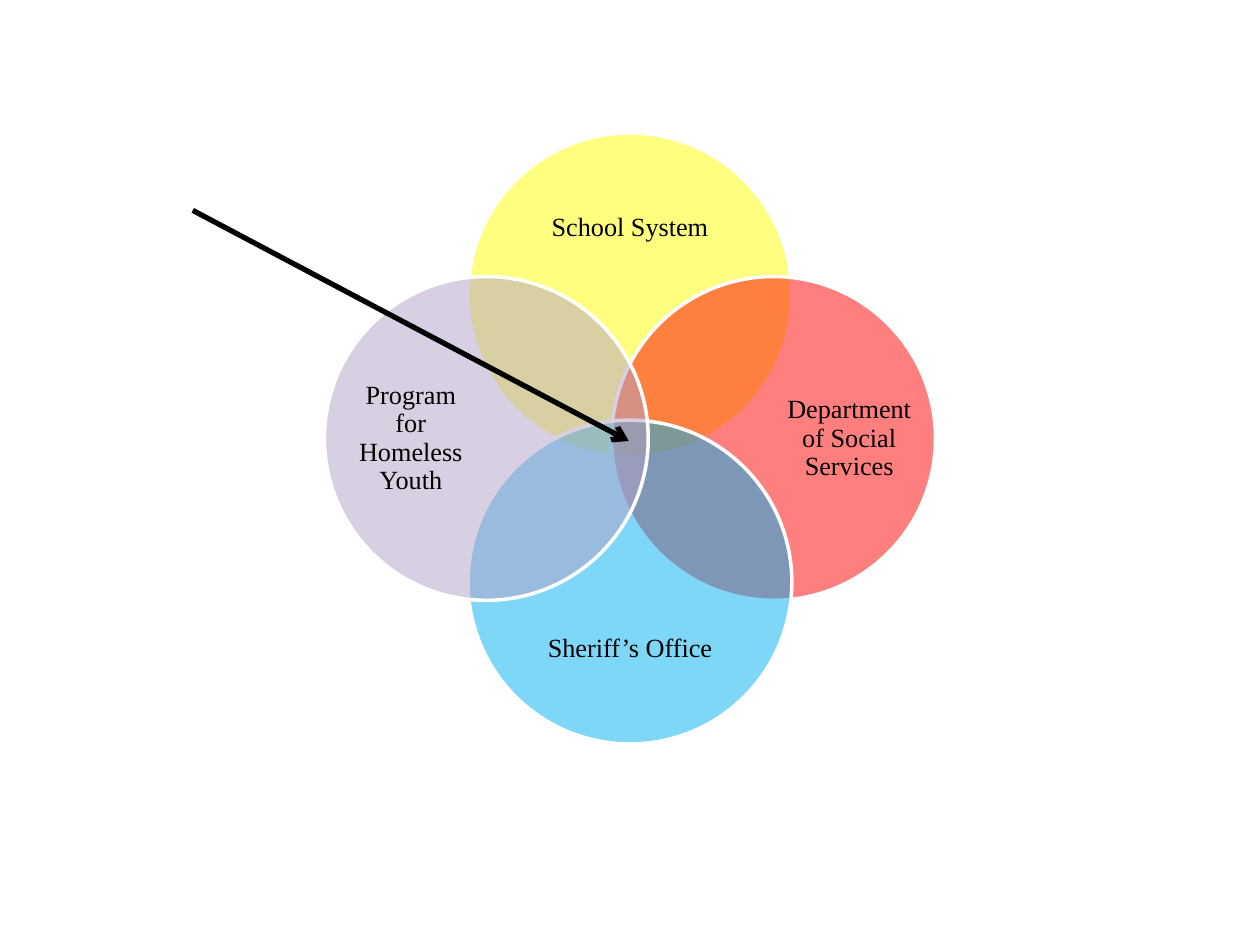
from dataclasses import dataclass

from lxml import etree
from pptx import Presentation
from pptx.dml.color import RGBColor
from pptx.enum import shapes, text
from pptx.oxml import ns
from pptx.util import Inches, Pt

CENTER_X, CENTER_Y = 5.0, 3.48
DIAMETER = 2.57
CIRCLE_OFFSET = 1.14
OPACITY = 50


@dataclass
class Agency:
    name: str
    color: str
    direction: tuple[int, int]  # unit step from the diagram centre


AGENCIES = [
    Agency("School System", "FFFF00", (0, -1)),
    Agency("Department of Social Services", "FF0000", (1, 0)),
    Agency("Sheriff’s Office", "00B0F0", (0, 1)),
    Agency("Program for Homeless Youth", "B3A2C7", (-1, 0)),
]


def rgb(color: str) -> RGBColor:
    return RGBColor.from_string(color)


def placed(agency: Agency, offset: float, width: float, height: float) -> list[int]:
    """Left, top, width and height of an item shifted from the diagram centre."""
    step_x, step_y = agency.direction
    left = CENTER_X + step_x * offset - width / 2
    top = CENTER_Y + step_y * offset - height / 2
    return [Inches(value) for value in (left, top, width, height)]


def add_circle(group, agency: Agency) -> None:
    circle = group.shapes.add_shape(
        shapes.MSO_SHAPE.OVAL, *placed(agency, CIRCLE_OFFSET, DIAMETER, DIAMETER))
    circle.shadow.inherit = False
    circle.fill.solid()
    circle.fill.fore_color.rgb = rgb(agency.color)
    fill_color = circle.fill._xPr.find(ns.qn("a:solidFill"))[0]
    etree.SubElement(fill_color, ns.qn("a:alpha"), val=str(OPACITY * 1000))
    circle.line.color.rgb = rgb("FFFFFF")
    circle.line.width = Pt(2)


def add_label(group, agency: Agency) -> None:
    beside = agency.direction[0] != 0
    offset, width, height = (1.74, 0.99, 1.98) if beside else (1.67, 1.98, 0.82)
    box = group.shapes.add_textbox(*placed(agency, offset, width, height))
    frame = box.text_frame
    frame.word_wrap = True
    frame.vertical_anchor = text.MSO_ANCHOR.MIDDLE
    frame.margin_left = frame.margin_right = 0
    frame.margin_top = frame.margin_bottom = 0
    frame.text = agency.name
    para = frame.paragraphs[0]
    para.alignment = text.PP_ALIGN.CENTER
    para.line_spacing = 0.9
    para.space_after = Pt(5)
    font = para.runs[0].font
    font.name = "Times New Roman"
    font.size = Pt(15)
    font.color.rgb = rgb("000000")


def add_arrow(page, start: tuple[float, float], end: tuple[float, float]) -> None:
    arrow = page.shapes.add_connector(
        shapes.MSO_CONNECTOR.STRAIGHT, *(Inches(value) for value in start + end))
    arrow.line.color.rgb = rgb("000000")
    arrow.line.width = Pt(3)
    etree.SubElement(arrow.line._get_or_add_ln(), ns.qn("a:tailEnd"), type="arrow")
    etree.SubElement(arrow._element.spPr, ns.qn("a:effectLst"))


def main() -> None:
    deck = Presentation()
    deck.slide_width, deck.slide_height = Inches(10), Inches(7.5)
    page = deck.slides.add_slide(deck.slide_layouts[6])
    diagram = page.shapes.add_group_shape()
    for agency in AGENCIES:
        add_circle(diagram, agency)
        add_label(diagram, agency)
    add_arrow(page, (1.53, 1.67), (4.99, 3.5))
    deck.save("out.pptx")


if __name__ == "__main__":
    main()
